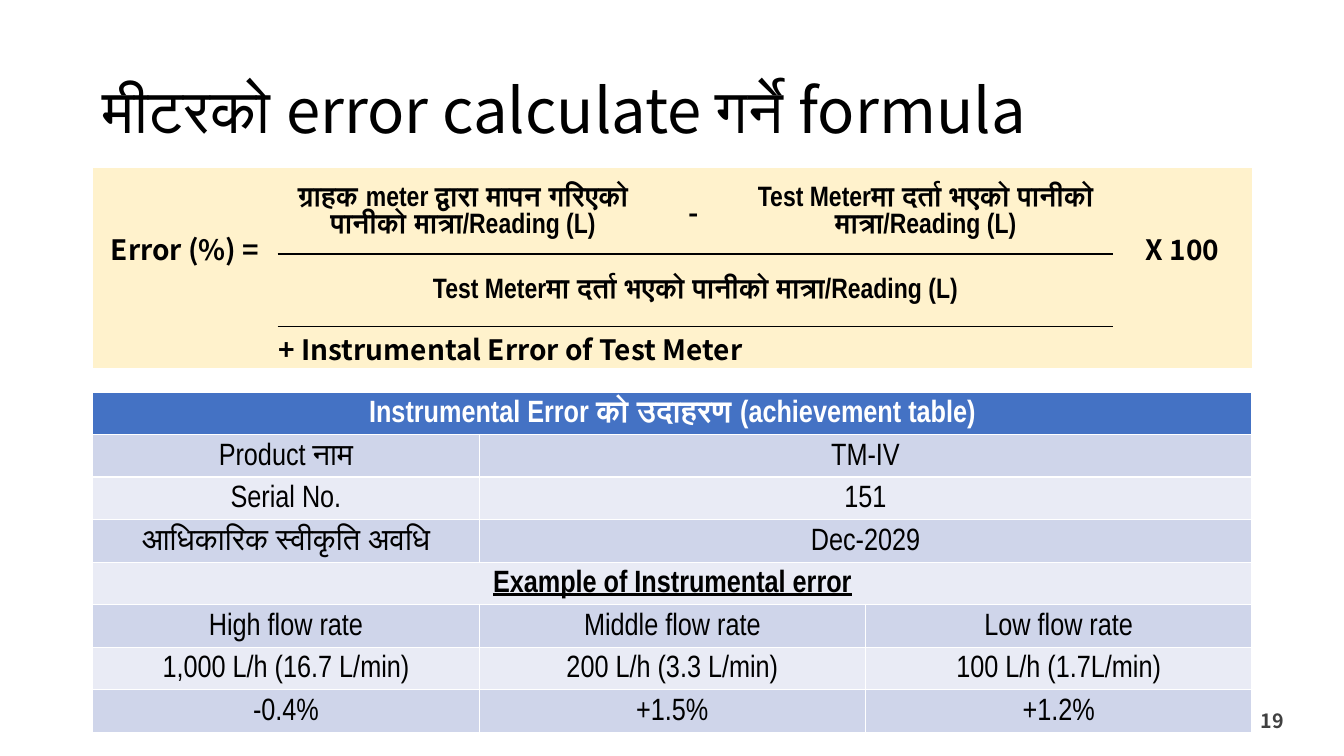
from dataclasses import dataclass

from lxml.etree import SubElement
from pptx import Presentation
from pptx.dml.color import RGBColor
from pptx.enum.text import MSO_ANCHOR as Anchor, MSO_AUTO_SIZE as AutoSize, PP_ALIGN as Align
from pptx.oxml import parse_xml
from pptx.oxml.ns import nsdecls, qn
from pptx.slide import Slide
from pptx.table import Table, _Cell as Cell
from pptx.text.text import TextFrame
from pptx.util import Length, Pt

SANS, NARROW = "Noto Sans CJK JP", "Arial Narrow"
BLACK, WHITE, GREY = "000000", "FFFFFF", "404040"
CREAM, BLUE, BANDS = "FFF2CC", "4472C4", ("E9EBF5", "CFD5EA")
LEFT, WIDTH = Pt(66.25), Pt(828)
NO_STYLE = "{2D5ABB26-0587-4C30-8999-92F81FD0307C}"


@dataclass
class Style:
    size: float
    font: str
    color: str = BLACK
    bold: bool = False
    underline: bool = False
    align: Align = Align.CENTER
    spacing: float | Length = 1.0


@dataclass
class Term:
    """One cell of the formula, with its span and the side that carries the fraction bar."""
    row: int
    column: int
    text: str
    style: Style
    rows: int = 1
    columns: int = 1


FORMULA_SANS = Style(20, SANS, bold=True)
FORMULA_NARROW = Style(20, NARROW, bold=True)
NUMERATOR = Style(20, NARROW, bold=True, spacing=0.95)
TERMS = [
    Term(0, 0, "Error (%) =", FORMULA_SANS, rows=2),
    Term(0, 1, "ग्राहक meter द्वारा मापन गरिएको पानीको मात्रा/Reading (L)", NUMERATOR),
    Term(0, 2, "-", FORMULA_SANS),
    Term(0, 3, "Test Meterमा दर्ता भएको पानीको मात्रा/Reading (L)", NUMERATOR),
    Term(0, 4, "X 100", FORMULA_SANS, rows=2),
    Term(1, 1, "Test Meterमा दर्ता भएको पानीको मात्रा/Reading (L)", FORMULA_NARROW, columns=3),
    Term(2, 1, "+ Instrumental Error of Test Meter",
         Style(20, SANS, bold=True, align=Align.LEFT), columns=3),
]

ROW_SPACING = Pt(23)
HEADER = Style(22, NARROW, WHITE, bold=True, spacing=ROW_SPACING)
SUBHEADER = Style(22, NARROW, bold=True, underline=True, spacing=ROW_SPACING)
BODY = Style(22, NARROW, spacing=ROW_SPACING)
EXAMPLE_ROWS = [
    (HEADER, ["Instrumental Error को उदाहरण (achievement table)"]),
    (BODY, ["Product नाम", "TM-IV"]),
    (BODY, ["Serial No.", "151"]),
    (BODY, ["आधिकारिक स्वीकृति अवधि", "Dec-2029"]),
    (SUBHEADER, ["Example of Instrumental error"]),
    (BODY, ["High flow rate", "Middle flow rate", "Low flow rate"]),
    (BODY, ["1,000 L/h (16.7 L/min)", "200 L/h (3.3 L/min)", "100 L/h (1.7L/min)"]),
    (BODY, ["-0.4%", "+1.5%", "+1.2%"]),
]


def rgb(color: str) -> RGBColor:
    return RGBColor.from_string(color)


def write(frame: TextFrame, text: str, style: Style) -> None:
    para = frame.paragraphs[0]
    para.alignment, para.line_spacing = style.align, style.spacing
    span = para.add_run()
    span.text = text
    values = {"name": style.font, "size": Pt(style.size),
              "bold": style.bold, "underline": style.underline}
    for name, value in values.items():
        setattr(span.font, name, value)
    span.font.color.rgb = rgb(style.color)


def fill(cell: Cell, color: str) -> None:
    cell.fill.solid()
    cell.fill.fore_color.rgb = rgb(color)


def draw_bar(cell: Cell, side: str) -> None:
    """Give one side of a cell, lnT or lnB, the black fraction bar."""
    line = parse_xml(f'<a:{side} {nsdecls("a")} w="{Pt(1.5)}"/>')
    color = SubElement(SubElement(line, qn("a:solidFill")), qn("a:srgbClr"))
    color.set("val", BLACK)
    cell._tc.get_or_add_tcPr().insert(0, line)


def add_table(slide: Slide, top: float, widths: list[float], heights: list[float]) -> Table:
    table = slide.shapes.add_table(len(heights), len(widths), LEFT, Pt(top),
                                   WIDTH, Pt(sum(heights))).table
    for column, width in zip(table.columns, widths):
        column.width = Pt(width)
    for row, height in zip(table.rows, heights):
        row.height = Pt(height)
    return table


def add_formula(slide: Slide) -> None:
    table = add_table(slide, 120.25, [132, 265, 64, 268, 99], [61, 52, 29])
    table.first_row = table.horz_banding = False
    table._tbl.tblPr.find(qn("a:tableStyleId")).text = NO_STYLE
    margins = {"margin_left": Pt(0.7), "margin_right": Pt(0.7),
               "margin_top": Pt(0.7), "margin_bottom": 0}
    for cell in table.iter_cells():
        fill(cell, CREAM)
        cell.vertical_anchor = Anchor.MIDDLE
        for name, value in margins.items():
            setattr(cell, name, value)
    for column in range(1, 4):
        draw_bar(table.cell(0, column), "lnB")
        draw_bar(table.cell(1, column), "lnT")
    for term in TERMS:
        cell = table.cell(term.row, term.column)
        if term.rows * term.columns > 1:
            cell.merge(table.cell(term.row + term.rows - 1, term.column + term.columns - 1))
        write(cell.text_frame, term.text, term.style)


def add_example(slide: Slide) -> None:
    """Draw the achievement table; the last text of a short row spans the remaining columns."""
    table = add_table(slide, 280, [276] * 3, [30.4] * len(EXAMPLE_ROWS))
    for row, (style, texts) in enumerate(EXAMPLE_ROWS):
        for column in range(3):
            fill(table.cell(row, column), BANDS[row % 2] if row else BLUE)
        if len(texts) < 3:
            table.cell(row, len(texts) - 1).merge(table.cell(row, 2))
        for column, text in enumerate(texts):
            write(table.cell(row, column).text_frame, text, style)


def add_title(slide: Slide) -> None:
    title = slide.shapes.title
    place = {"left": LEFT, "top": Pt(28.75), "width": WIDTH, "height": Pt(104.5)}
    for name, value in place.items():
        setattr(title, name, value)
    frame = title.text_frame
    frame.vertical_anchor, frame.auto_size = Anchor.MIDDLE, AutoSize.NONE
    write(frame, "मीटरको error calculate गर्ने formula",
          Style(44, SANS, align=Align.LEFT, spacing=0.9))


def add_page_number(slide: Slide) -> None:
    frame = slide.shapes.add_textbox(Pt(708), Pt(500.5), Pt(216), Pt(28.75)).text_frame
    frame.word_wrap, frame.vertical_anchor = True, Anchor.MIDDLE
    write(frame, "19", Style(14, SANS, GREY, bold=True, align=Align.RIGHT))


def main() -> None:
    deck = Presentation()
    deck.slide_width, deck.slide_height = Pt(960), Pt(540)
    page = deck.slides.add_slide(deck.slide_layouts[5])
    add_title(page)
    add_formula(page)
    add_example(page)
    add_page_number(page)
    deck.save("out.pptx")


if __name__ == "__main__":
    main()
